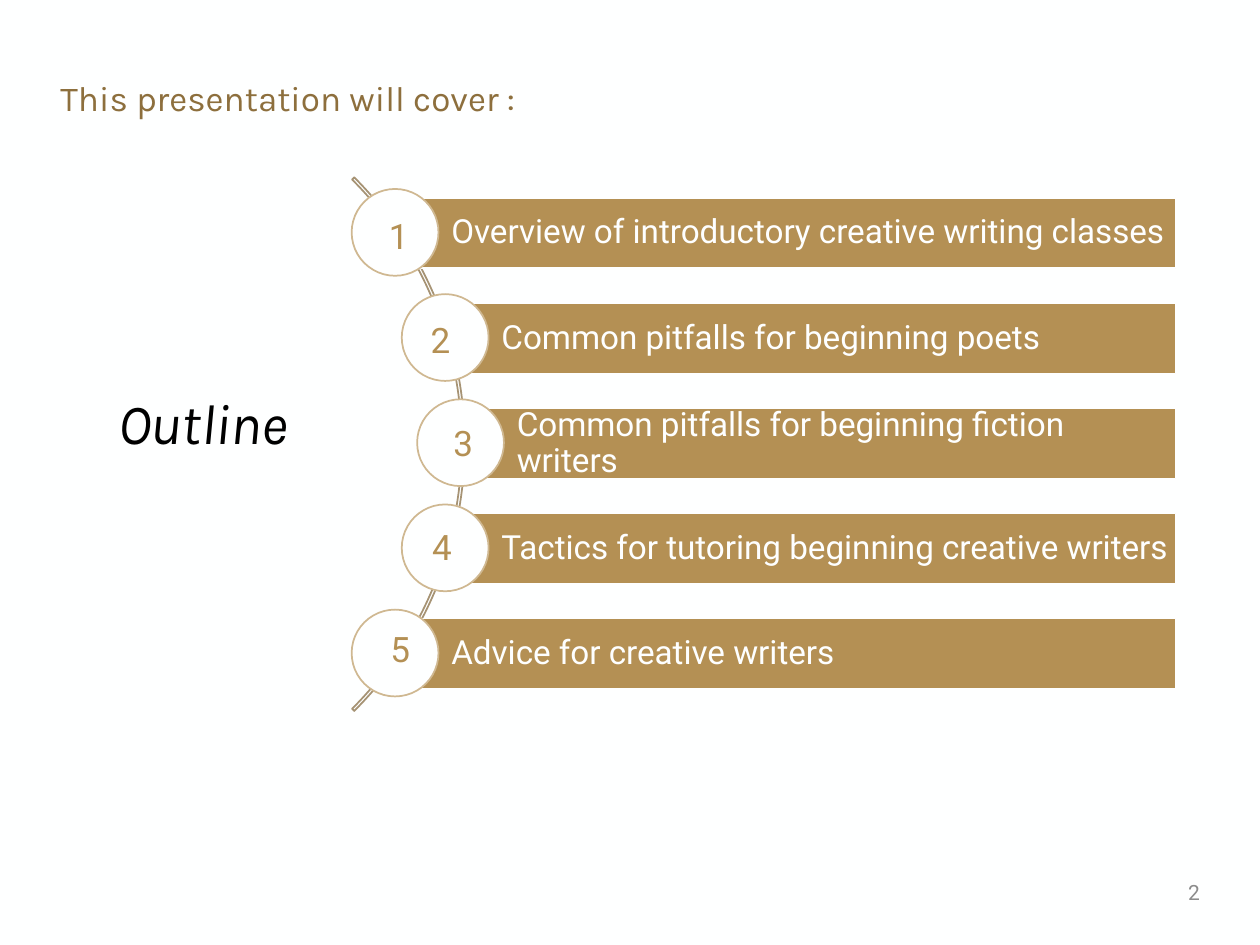
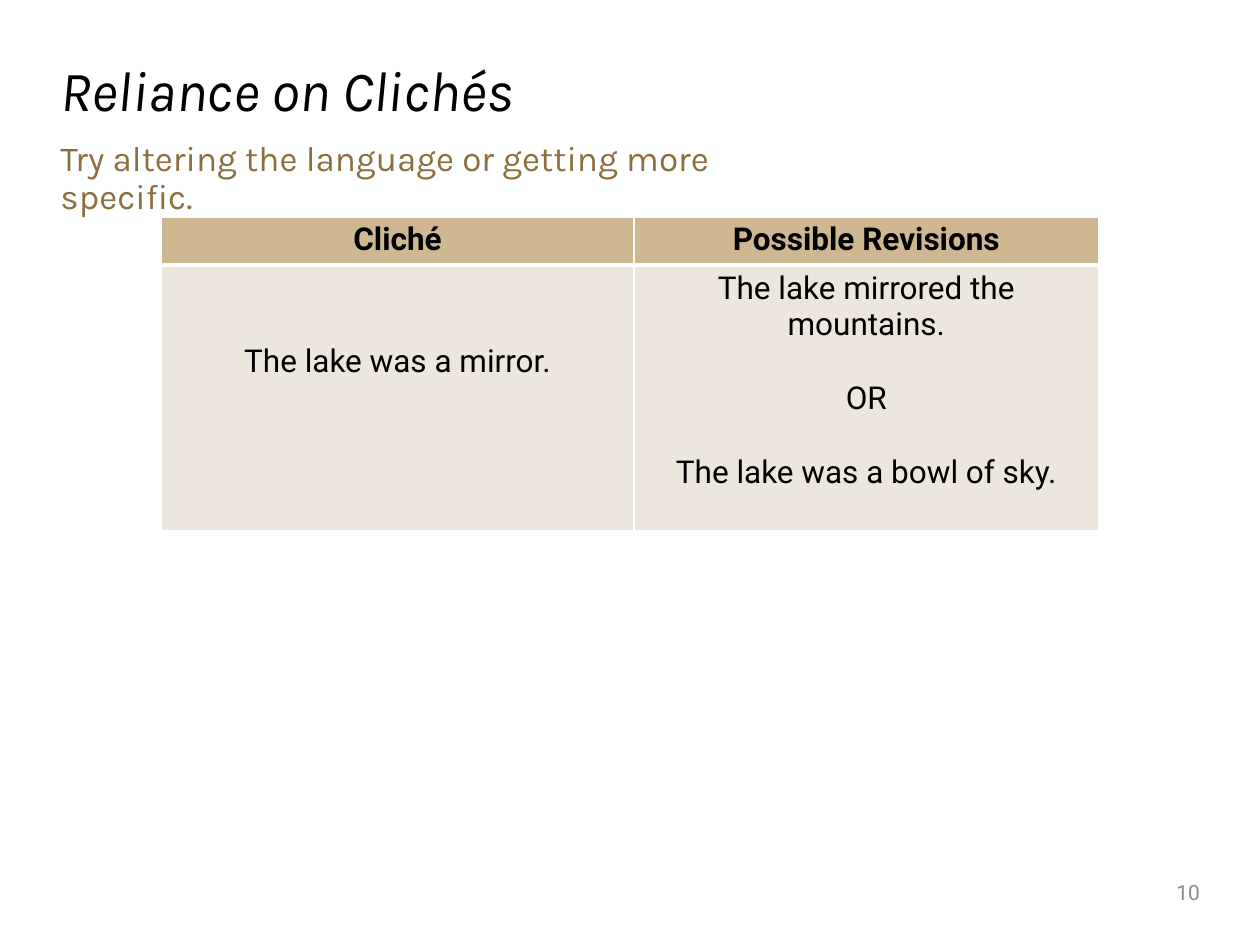
"""Build the outline slide and the cliché slide of a creative writing talk."""
import dataclasses
import pptx
import pptx.dml.color
import pptx.enum.shapes
import pptx.enum.text
import pptx.util
from lxml import etree

Cm, Pt = pptx.util.Cm, pptx.util.Pt
Shape = pptx.enum.shapes.MSO_SHAPE
Align = pptx.enum.text.PP_ALIGN
Anchor = pptx.enum.text.MSO_ANCHOR
rgb = pptx.dml.color.RGBColor.from_string


@dataclasses.dataclass(frozen=True)
class Theme:
    paper: str = "FEFFFF"
    ink: str = "000000"
    brown: str = "8D6F3D"
    gold: str = "B49054"
    sand: str = "CFB891"
    cream: str = "EDE6DC"
    arc: str = "A69374"
    grey: str = "8C8C8C"
    head: str = "Karla"
    body: str = "Roboto"
    title: float = 32.4
    lead: float = 20
    bar: float = 19
    cell: float = 18
    foot: float = 12


theme = Theme()


def write(frame, text, size, color, font=theme.body, align=Align.LEFT, bold=False,
          slant=False, lines=None, gap=0, anchor=Anchor.TOP):
    frame.word_wrap = True
    frame.vertical_anchor = anchor
    for i, line in enumerate(text.split("\n")):
        para = frame.paragraphs[0] if i == 0 else frame.add_paragraph()
        para.alignment = align
        if lines:
            para.line_spacing = lines
        if i:
            para.space_before = Pt(gap)
        run = para.add_run()
        run.text = line
        run.font.name, run.font.size = font, Pt(size)
        run.font.bold, run.font.italic = bold, slant
        run.font.color.rgb = rgb(color)


def draw(slide, kind, area, line, fill=None):
    shape = slide.shapes.add_shape(kind, *map(Cm, area))
    shape.shadow.inherit = False
    if fill:
        shape.fill.solid()
        shape.fill.fore_color.rgb = rgb(fill)
    else:
        shape.fill.background()
    shape.line.color.rgb = rgb(line)
    shape.line.width = Pt(1)
    return shape


deck = pptx.Presentation()
deck.slide_width, deck.slide_height = Cm(25.4), Cm(19.05)

pages = [
    ("Outline", (2.13, 7.77, 5.46, 1.63),
     "This presentation will cover :", (0.97, 1.52, 23.5, 1.02), "2"),
    ("Reliance on Clichés", (0.97, 1.07, 23.47, 1.63),
     "Try altering the language or getting more specific.", (0.97, 2.72, 15.72, 1.02), "10"),
]
slides = []
for title, spot, lead, place, page in pages:
    slide = deck.slides.add_slide(deck.slide_layouts[6])
    slide.background.fill.solid()
    slide.background.fill.fore_color.rgb = rgb(theme.paper)
    write(slide.shapes.add_textbox(*map(Cm, spot)).text_frame, title, theme.title, theme.ink,
          font=theme.head, slant=True, lines=0.9, anchor=Anchor.MIDDLE)
    write(slide.shapes.add_textbox(*map(Cm, place)).text_frame, lead, theme.lead, theme.brown,
          font=theme.head, lines=0.9)
    write(slide.shapes.add_textbox(Cm(21.39), Cm(17.48), Cm(3.05), Cm(1.02)).text_frame,
          page, theme.foot, theme.grey, align=Align.RIGHT, anchor=Anchor.MIDDLE)
    slides.append(slide)
plan, fixes = slides

arc = draw(plan, Shape.BLOCK_ARC, (-5.84, 1.35, 15.21, 15.21), theme.arc)
for i, turn in enumerate((189, 27, 0.004)):
    arc.adjustments[i] = turn

topics = [
    ("Overview of introductory creative writing classes", 7.98, 7.59, 4.19),
    ("Common pitfalls for beginning poets", 8.99, 8.43, 6.3),
    ("Common pitfalls for beginning fiction writers", 9.3, 8.89, 8.38),
    ("Tactics for tutoring beginning creative writers", 8.99, 8.46, 10.46),
    ("Advice for creative writers", 7.98, 7.62, 12.52),
]
for i, (topic, left, x, y) in enumerate(topics):
    top = 3.99 + 2.12 * i
    bar = draw(plan, Shape.RECTANGLE, (left, top, 23.7 - left, 1.42), theme.paper, theme.gold)
    frame = bar.text_frame
    frame.margin_left = Cm(1.12)
    frame.margin_right = frame.margin_top = frame.margin_bottom = Cm(0.13)
    write(frame, topic, theme.bar, theme.paper, lines=0.9, anchor=Anchor.MIDDLE)
    draw(plan, Shape.OVAL, (left - 0.89, top - 0.18, 1.75, 1.75), theme.sand, theme.paper)
    write(plan.shapes.add_textbox(Cm(x), Cm(y), Cm(0.86), Cm(1.12)).text_frame,
          str(i + 1), theme.lead, theme.gold)

grid = fixes.shapes.add_table(2, 2, Cm(3.25), Cm(4.37), Cm(18.9), Cm(6.33)).table
grid.first_row = grid.horz_banding = False
for col, width in zip(grid.columns, (9.53, 9.37)):
    col.width = Cm(width)
for row, height in zip(grid.rows, (0.97, 5.36)):
    row.height = Cm(height)

rows = [
    ("Cliché", "Possible Revisions"),
    ("The lake was a mirror.",
     "The lake mirrored the mountains.\nOR\nThe lake was a bowl of sky."),
]
for r, row in enumerate(rows):
    for c, text in enumerate(row):
        cell = grid.cell(r, c)
        cell.margin_left = cell.margin_right = Cm(0.18)
        cell.margin_top = cell.margin_bottom = Cm(0.1)
        props = cell._tc.get_or_add_tcPr()
        for side in "LRTB":
            thick = 3 if (r, side) in ((0, "B"), (1, "T")) else 1
            edge = etree.SubElement(props, pptx.oxml.ns.qn(f"a:ln{side}"), w=str(Pt(thick)))
            solid = etree.SubElement(edge, pptx.oxml.ns.qn("a:solidFill"))
            etree.SubElement(solid, pptx.oxml.ns.qn("a:srgbClr"), val=theme.paper)
        cell.fill.solid()
        cell.fill.fore_color.rgb = rgb(theme.cream if r else theme.sand)
        write(cell.text_frame, text, theme.cell, theme.ink, align=Align.CENTER,
              bold=r == 0, gap=21)
grid.cell(1, 0).margin_top = Cm(1.58)

deck.save("out.pptx")
